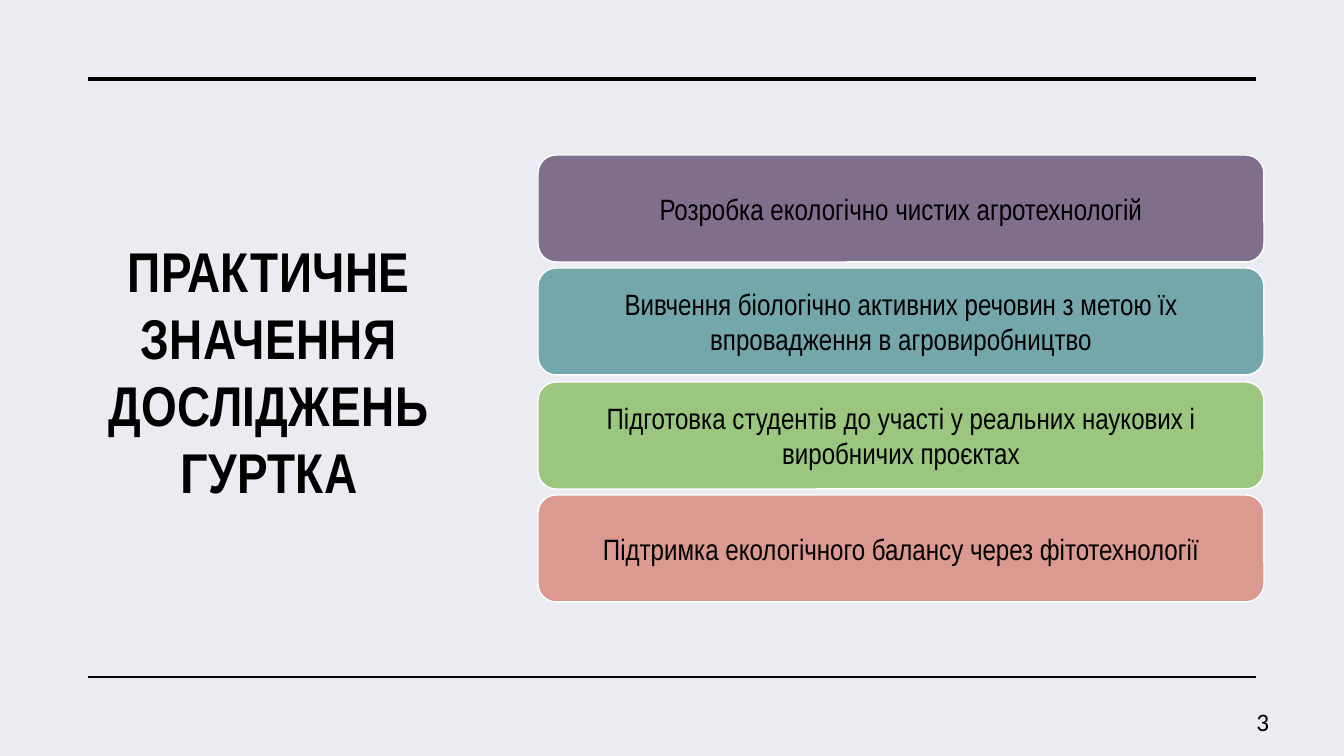
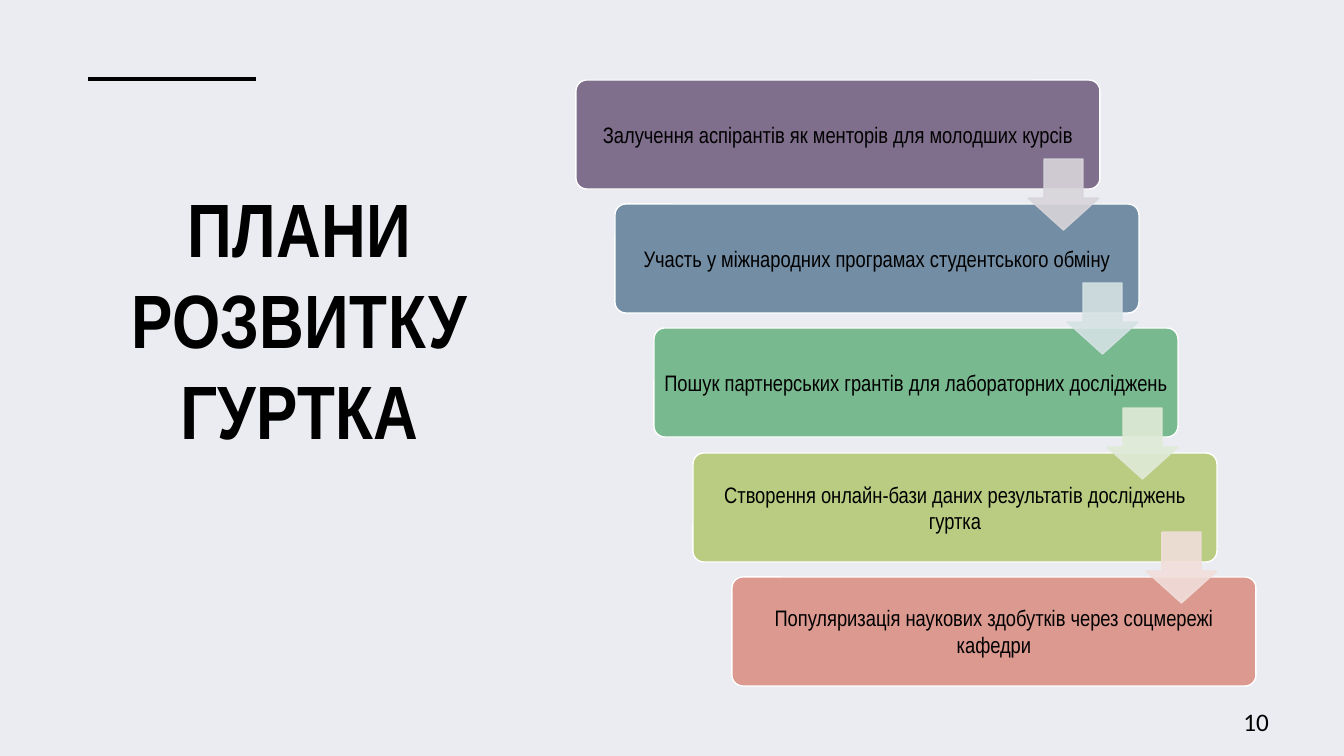
"""Build two slides about a student research circle."""
from dataclasses import dataclass

from lxml import etree
from pptx import Presentation
from pptx.dml.color import RGBColor
from pptx.enum.shapes import MSO_CONNECTOR, MSO_SHAPE
from pptx.enum.text import MSO_ANCHOR, MSO_AUTO_SIZE, PP_ALIGN
from pptx.oxml.ns import qn
from pptx.util import Emu, Pt

SLIDE_WIDTH, SLIDE_HEIGHT = 1344, 756
EMU_PER_PX = 12192000 / SLIDE_WIDTH
TITLE_ONLY_LAYOUT = 5

STRAIGHT = MSO_CONNECTOR.STRAIGHT
ROUNDED = MSO_SHAPE.ROUNDED_RECTANGLE
DOWN_ARROW = MSO_SHAPE.DOWN_ARROW
TOP, MIDDLE = MSO_ANCHOR.TOP, MSO_ANCHOR.MIDDLE
NO_AUTOFIT = MSO_AUTO_SIZE.NONE
CENTER, RIGHT = PP_ALIGN.CENTER, PP_ALIGN.RIGHT

BACKGROUND = RGBColor(0xEA, 0xEC, 0xF1)
BLACK = RGBColor(0x00, 0x00, 0x00)
WHITE = RGBColor(0xFF, 0xFF, 0xFF)
PURPLE = RGBColor(0x7F, 0x6E, 0x8C)
TEAL = RGBColor(0x74, 0xA7, 0xAC)
LEAF = RGBColor(0x9A, 0xC6, 0x7F)
CORAL = RGBColor(0xDB, 0x99, 0x8F)
STEEL = RGBColor(0x72, 0x8D, 0xA4)
MINT = RGBColor(0x79, 0xB9, 0x8F)
OLIVE = RGBColor(0xBA, 0xCC, 0x82)
PALE_PURPLE = RGBColor(0xD8, 0xD5, 0xDA)
PALE_TEAL = RGBColor(0xD5, 0xE2, 0xE3)
PALE_LEAF = RGBColor(0xDF, 0xEA, 0xD7)
PALE_CORAL = RGBColor(0xF1, 0xDE, 0xDA)

TITLE_FONT = "Arial Narrow"
NUMBER_FONT = "Calibri"
RULE_LEFT, RULE_RIGHT, SHORT_RULE_RIGHT = 88, 1256, 256
TOP_RULE_Y, BOTTOM_RULE_Y = 79, 677
CARD_INSET = 4
ARROW_OPACITY = 90000


@dataclass(frozen=True)
class Box:
    """A rectangle in px."""
    left: int
    top: int
    width: int
    height: int


@dataclass(frozen=True)
class Rule:
    """A horizontal line in px, with its weight in points."""
    right: int
    y: int
    weight: float


@dataclass(frozen=True)
class Card:
    """One coloured statement."""
    text: str
    fill: RGBColor


@dataclass(frozen=True)
class Page:
    """Everything that differs between the slides."""
    title: str
    title_box: Box
    title_size: int
    number: str
    rules: tuple[Rule, ...]
    cards: tuple[Card, ...]
    first_card: Box
    last_card: Box
    card_size: int
    corner: float
    arrows: tuple[RGBColor, ...] = ()


FIRST_ARROW = Box(1028, 159, 71, 71)
LAST_ARROW = Box(1146, 532, 71, 71)

PAGES = (
    Page(
        title="ПРАКТИЧНЕ ЗНАЧЕННЯ ДОСЛIДЖЕНЬ ГУРТКА",
        title_box=Box(27, 231, 484, 295),
        title_size=40,
        number="3",
        rules=(Rule(RULE_RIGHT, TOP_RULE_Y, 3.5), Rule(RULE_RIGHT, BOTTOM_RULE_Y, 1)),
        cards=(
            Card("Розробка екологiчно чистих агротехнологiй", PURPLE),
            Card("Вивчення бiологiчно активних речовин з метою їх "
                 "впровадження в агровиробництво", TEAL),
            Card("Пiдготовка студентiв до участi у реальних наукових i "
                 "виробничих проєктах", LEAF),
            Card("Пiдтримка екологiчного балансу через фiтотехнологiї", CORAL),
        ),
        first_card=Box(538, 155, 726, 107),
        last_card=Box(538, 495, 726, 107),
        card_size=21,
        corner=0.17,
    ),
    Page(
        title="ПЛАНИ РОЗВИТКУ ГУРТКА",
        title_box=Box(55, 177, 489, 354),
        title_size=54,
        number="10",
        rules=(Rule(SHORT_RULE_RIGHT, TOP_RULE_Y, 3.5),),
        cards=(
            Card("Залучення аспірантів як менторів для молодших курсів", PURPLE),
            Card("Участь у міжнародних програмах студентського обміну", STEEL),
            Card("Пошук партнерських грантів для лабораторних досліджень", MINT),
            Card("Створення онлайн-бази даних результатів досліджень гуртка", OLIVE),
            Card("Популяризація наукових здобутків через соцмережі кафедри", CORAL),
        ),
        first_card=Box(576, 80, 524, 109),
        last_card=Box(732, 577, 524, 109),
        card_size=16,
        corner=0.1,
        arrows=(PALE_PURPLE, PALE_TEAL, PALE_LEAF, PALE_CORAL),
    ),
)


def px(length: int) -> Emu:
    """Turn px into EMU."""
    return Emu(round(length * EMU_PER_PX))


def frame(box: Box) -> tuple[Emu, Emu, Emu, Emu]:
    """Give left, top, width and height of a box in EMU."""
    return px(box.left), px(box.top), px(box.width), px(box.height)


def spread(first: Box, last: Box, count: int) -> list[Box]:
    """Space boxes evenly from the first place to the last."""
    steps = count - 1
    return [
        Box(
            first.left + round((last.left - first.left) * index / steps),
            first.top + round((last.top - first.top) * index / steps),
            first.width,
            first.height,
        )
        for index in range(count)
    ]


def write(shape, text: str, size: int, font_name: str, alignment, anchor, bold: bool = False):
    """Write one formatted paragraph into a shape and return it."""
    text_frame = shape.text_frame
    text_frame.text = text
    text_frame.word_wrap = True
    text_frame.auto_size = NO_AUTOFIT
    text_frame.vertical_anchor = anchor
    paragraph = text_frame.paragraphs[0]
    paragraph.alignment = alignment
    font = paragraph.font
    font.name, font.size, font.bold = font_name, Pt(size), bold
    font.color.rgb = BLACK
    return paragraph


def add_title(slide, page: Page) -> None:
    """Place and format the title placeholder."""
    title = slide.shapes.title
    title.left, title.top, title.width, title.height = frame(page.title_box)
    paragraph = write(title, page.title, page.title_size, TITLE_FONT, CENTER, TOP, bold=True)
    paragraph._p.get_or_add_pPr().find(qn("a:defRPr")).set("spc", "30")


def add_rule(slide, rule: Rule) -> None:
    """Draw a horizontal black line."""
    connector = slide.shapes.add_connector(
        STRAIGHT, px(RULE_LEFT), px(rule.y), px(rule.right), px(rule.y))
    connector.line.color.rgb = BLACK
    connector.line.width = Pt(rule.weight)
    etree.SubElement(connector._element.spPr, qn("a:effectLst"))


def add_number(slide, number: str) -> None:
    """Write the slide number in the lower right corner."""
    text_box = slide.shapes.add_textbox(*frame(Box(1204, 701, 75, 40)))
    write(text_box, number, 18, NUMBER_FONT, RIGHT, MIDDLE)


def add_filled(slide, kind, box: Box, fill: RGBColor, line: RGBColor):
    """Add a flat preset shape with a one point outline."""
    shape = slide.shapes.add_shape(kind, *frame(box))
    shape.shadow.inherit = False
    shape.fill.solid()
    shape.fill.fore_color.rgb = fill
    shape.line.color.rgb = line
    shape.line.width = Pt(1)
    return shape


def add_card(slide, card: Card, box: Box, page: Page) -> None:
    """Add a rounded card with its statement."""
    shape = add_filled(slide, ROUNDED, box, card.fill, WHITE)
    shape.adjustments[0] = page.corner
    write(shape, card.text, page.card_size, TITLE_FONT, CENTER, MIDDLE)
    text_frame = shape.text_frame
    text_frame.margin_left = text_frame.margin_right = px(CARD_INSET)
    text_frame.margin_top = text_frame.margin_bottom = px(CARD_INSET)


def add_arrow(slide, color: RGBColor, box: Box) -> None:
    """Add a slightly transparent down arrow."""
    shape = add_filled(slide, DOWN_ARROW, box, color, color)
    shape.adjustments[0] = 0.55
    shape.adjustments[1] = 0.45
    for element in shape._element.spPr.iter(qn("a:srgbClr")):
        etree.SubElement(element, qn("a:alpha"), val=str(ARROW_OPACITY))


def add_page(presentation, page: Page) -> None:
    """Build one slide."""
    slide = presentation.slides.add_slide(presentation.slide_layouts[TITLE_ONLY_LAYOUT])
    add_title(slide, page)
    for rule in page.rules:
        add_rule(slide, rule)
    add_number(slide, page.number)
    card_boxes = spread(page.first_card, page.last_card, len(page.cards))
    for card, box in zip(page.cards, card_boxes):
        add_card(slide, card, box, page)
    arrow_boxes = spread(FIRST_ARROW, LAST_ARROW, len(page.arrows))
    for color, box in zip(page.arrows, arrow_boxes):
        add_arrow(slide, color, box)


def main() -> None:
    """Create and save the presentation."""
    presentation = Presentation()
    presentation.slide_width, presentation.slide_height = px(SLIDE_WIDTH), px(SLIDE_HEIGHT)
    background = presentation.slide_master.background.fill
    background.solid()
    background.fore_color.rgb = BACKGROUND
    for page in PAGES:
        add_page(presentation, page)
    presentation.save("out.pptx")


if __name__ == "__main__":
    main()
